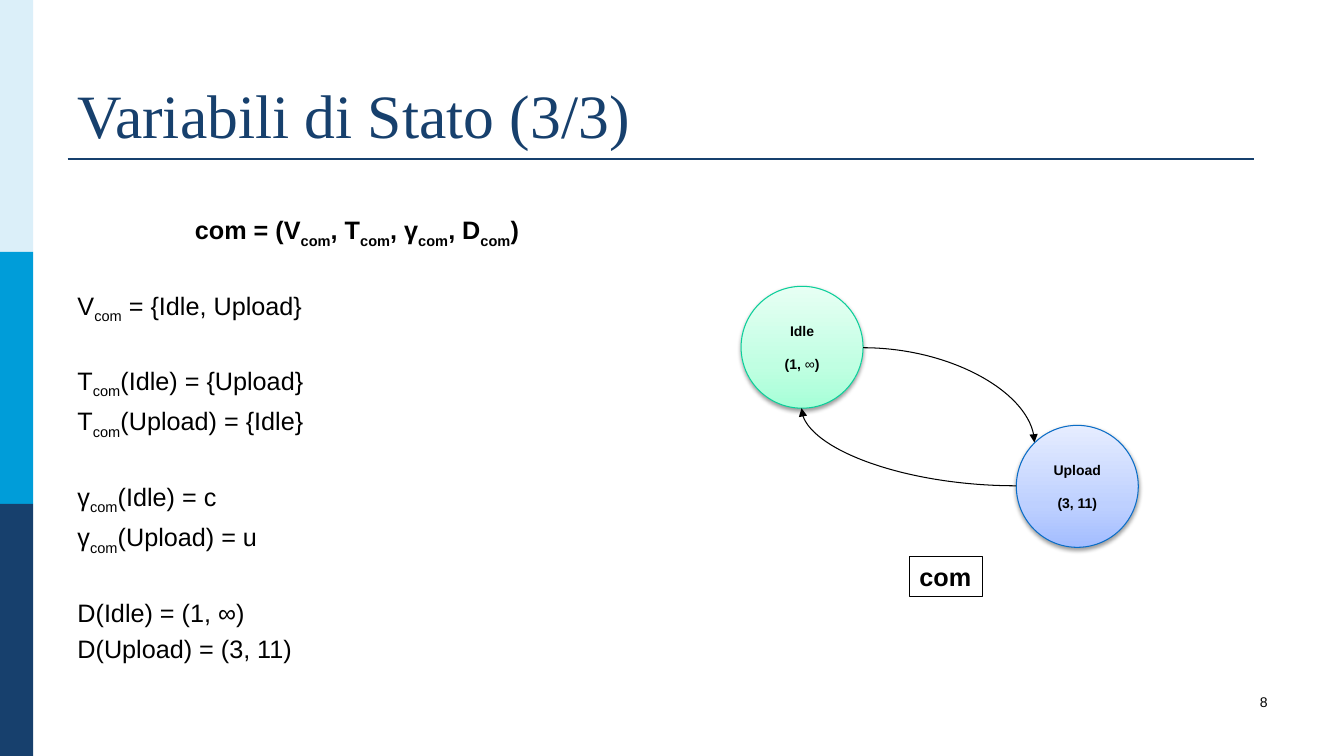
from lxml.etree import SubElement
from pptx import Presentation
from pptx.dml.color import RGBColor
from pptx.enum.shapes import MSO_CONNECTOR, MSO_SHAPE
from pptx.enum.text import MSO_ANCHOR, MSO_AUTO_SIZE, PP_ALIGN
from pptx.oxml import parse_xml
from pptx.oxml.ns import nsdecls, qn
from pptx.util import Inches, Pt

NAVY, BLACK = "17406D", "000000"


def rgb(color):
    return RGBColor.from_string(color)


def write(p, text, color=BLACK, align=PP_ALIGN.LEFT, **font):
    """Split text at ~ into runs; every second run is a marked one."""
    p.alignment = align
    for part in text.split("~"):
        r = p.add_run()
        r.text = part
        r.font.color.rgb = rgb(color)
        for name, value in {"name": "Arial", **font}.items():
            setattr(r.font, name, value)
    return p.runs[1::2]


prs = Presentation()
prs.slide_width, prs.slide_height = Inches(13.33), Inches(7.5)
s = prs.slides.add_slide(prs.slide_layouts[6])

# Side band and title rule
for i, color in enumerate(["DBEFF9", "009DD9", NAVY]):
    sp = s.shapes.add_shape(MSO_SHAPE.RECTANGLE, 0, Inches(2.5 * i), Inches(0.33), Inches(2.5))
    sp.shadow.inherit = False
    sp.fill.solid()
    sp.fill.fore_color.rgb = rgb(color)
    sp.line.fill.background()

rule = s.shapes.add_connector(
    MSO_CONNECTOR.STRAIGHT, Inches(0.67), Inches(1.58), Inches(12.44), Inches(1.58))
rule.line.color.rgb = rgb(NAVY)
rule.line.width = Pt(1.5)
SubElement(rule._element.spPr, qn("a:effectLst"))

# Title and page number
tf = s.shapes.add_textbox(Inches(0.67), Inches(0.3), Inches(12), Inches(1.25)).text_frame
tf.word_wrap = True
tf.vertical_anchor = MSO_ANCHOR.BOTTOM
write(tf.paragraphs[0], "Variabili di Stato (3/3)", NAVY, name="Times New Roman", size=Pt(44))

tf = s.shapes.add_textbox(Inches(9.56), Inches(6.83), Inches(3.11), Inches(0.5)).text_frame
tf.word_wrap = True
write(tf.paragraphs[0], "8", align=PP_ALIGN.RIGHT, size=Pt(10))

# Definitions, grouped by a wider space before each group
groups = [
    ["com = (V~com~, T~com~, γ~com~, D~com~)"],
    ["V~com~ = {Idle, Upload}"],
    ["T~com~(Idle) = {Upload}", "T~com~(Upload) = {Idle}"],
    ["γ~com~(Idle) = c", "γ~com~(Upload) = u"],
    ["D(Idle) = (1, ∞)", "D(Upload) = (3, 11)"],
]
tf = s.shapes.add_textbox(Inches(0.67), Inches(2.08), Inches(5.74), Inches(4.8)).text_frame
tf.word_wrap = True
for g, lines in enumerate(groups):
    for i, line in enumerate(lines):
        heading = g == 0
        p = tf.paragraphs[0] if heading else tf.add_paragraph()
        p.space_before = Pt(2 if heading else 4.3 if i else 29.3)
        align = PP_ALIGN.CENTER if heading else PP_ALIGN.LEFT
        for r in write(p, line, align=align, size=Pt(18), bold=heading):
            r.font._element.set("baseline", "-25000")

# States
states = [
    (7.35, 2.84, "Idle", "(1, ~∞~)", "0BCF9A", ["A6FFD7", "C0FFE2", "E7FFF4"]),
    (10.08, 4.22, "Upload", "(3, 11)", "0A6DC6", ["A3BDFF", "BED0FF", "E6EDFF"]),
]
for x, y, name, duration, outline, stops in states:
    sp = s.shapes.add_shape(MSO_SHAPE.OVAL, Inches(x), Inches(y), Inches(1.21), Inches(1.21))
    sp.fill.gradient()
    sp.fill.gradient_angle = 90
    gs_list = sp._element.spPr.find(".//" + qn("a:gsLst"))
    gs_list.clear()
    for pos, color in zip([0, 35, 100], stops):
        gs = SubElement(gs_list, qn("a:gs"), pos=str(pos * 1000))
        SubElement(gs, qn("a:srgbClr"), val=color)
    sp.line.color.rgb = rgb(outline)
    sp.line.width = Pt(0.75)
    sp.shadow.inherit = False
    sp._element.spPr.find(qn("a:effectLst")).append(parse_xml(
        f'<a:outerShdw {nsdecls("a")} blurRad="{Pt(3.1)}" dist="{Pt(1.6)}" dir="5400000" '
        'rotWithShape="0"><a:srgbClr val="000000"><a:alpha val="38000"/></a:srgbClr></a:outerShdw>'))
    tf = sp.text_frame
    tf.vertical_anchor = MSO_ANCHOR.MIDDLE
    write(tf.paragraphs[0], name, align=PP_ALIGN.CENTER, size=Pt(10), bold=True)
    p = tf.add_paragraph()
    p.space_before = Pt(12)
    for r in write(p, duration, align=PP_ALIGN.CENTER, size=Pt(10), bold=True):
        r.font.bold = False

# Transitions
for ends in [(10.08, 4.82, 7.95, 4.05), (8.56, 3.45, 10.26, 4.39)]:
    arrow = s.shapes.add_connector(MSO_CONNECTOR.CURVE, *[Inches(v) for v in ends])
    arrow.line.color.rgb = rgb(BLACK)
    arrow.line.width = Pt(0.75)
    spPr = arrow._element.spPr
    spPr.find(qn("a:prstGeom")).set("prst", "curvedConnector2")
    SubElement(spPr.find(qn("a:ln")), qn("a:tailEnd"), type="triangle")
    SubElement(spPr, qn("a:effectLst"))

# Diagram label
label = s.shapes.add_textbox(Inches(9.02), Inches(5.52), Inches(0.72), Inches(0.4))
label.line.color.rgb = rgb(BLACK)
label.line.width = Pt(0.75)
tf = label.text_frame
tf.word_wrap = False
tf.auto_size = MSO_AUTO_SIZE.SHAPE_TO_FIT_TEXT
write(tf.paragraphs[0], "com", size=Pt(18), bold=True)

prs.save("out.pptx")
